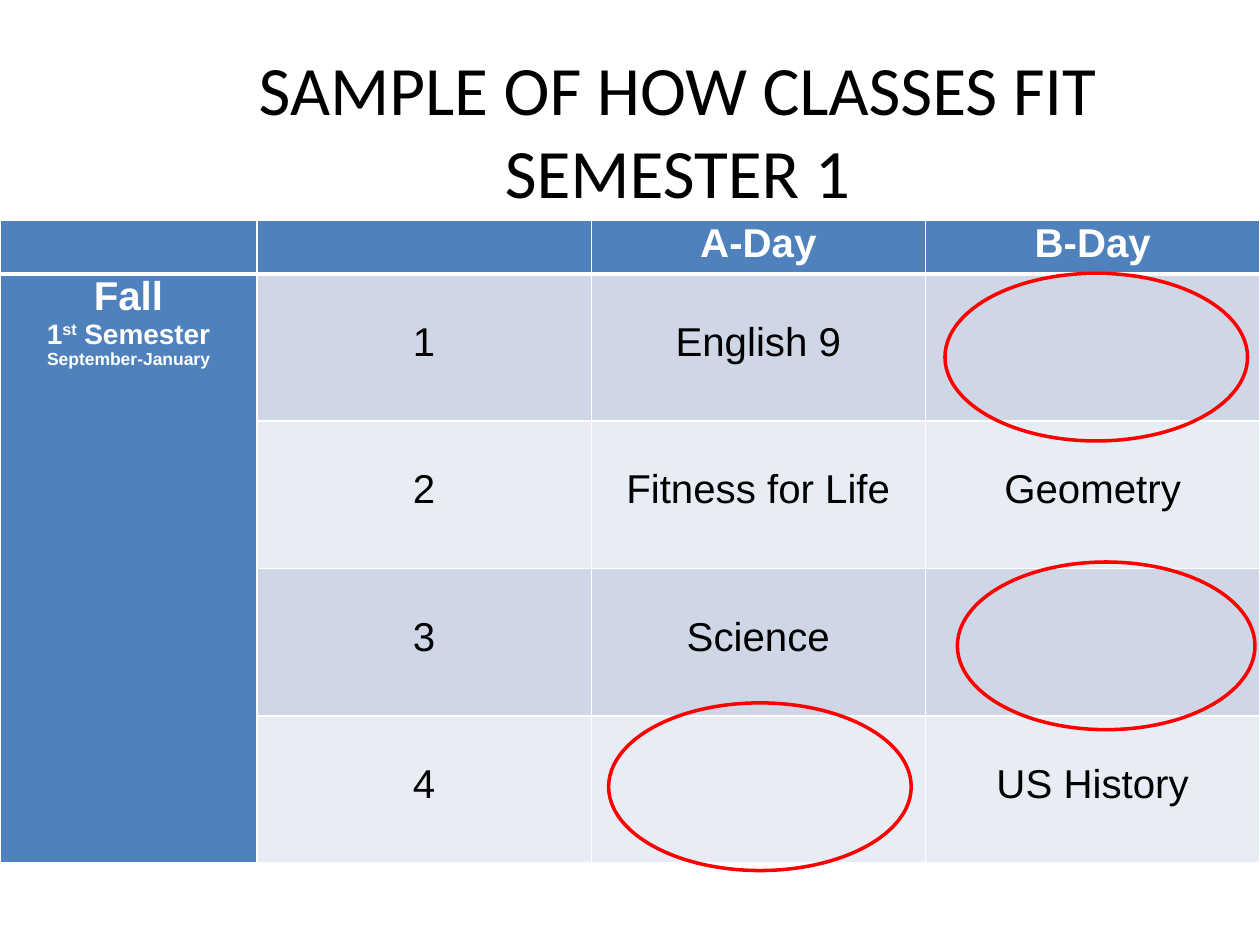
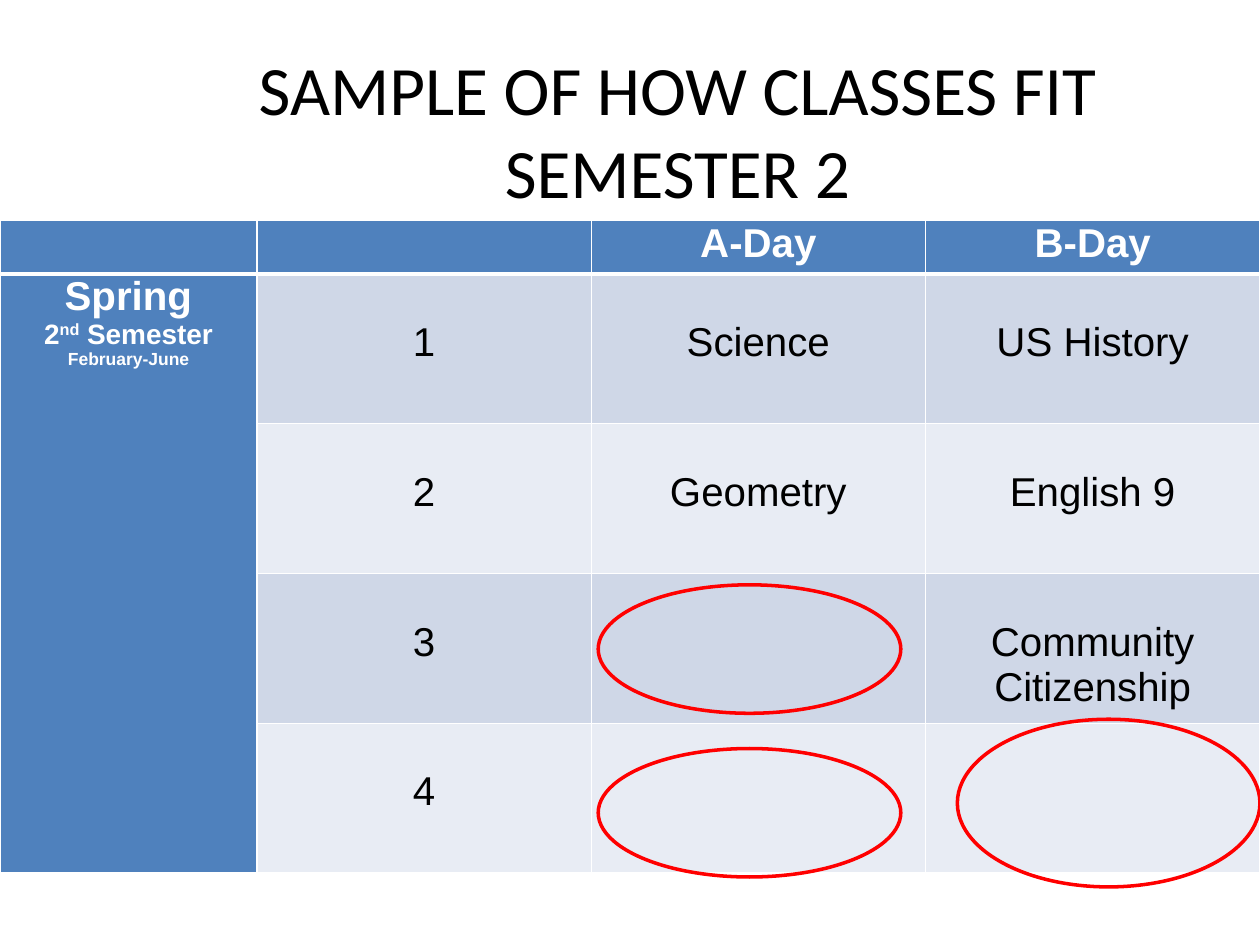
from lxml import etree
from pptx import Presentation
from pptx.dml.color import RGBColor as RGB
from pptx.enum.shapes import MSO_SHAPE as SHAPE
from pptx.enum.text import MSO_ANCHOR as ANCHOR, MSO_AUTO_SIZE as AUTO, PP_ALIGN as ALIGN
from pptx.oxml.ns import qn
from pptx.util import Cm, Pt

COLORS = {"header": "4F81BD", "odd": "CFD7E7", "even": "E8ECF4",
          "white": "FFFFFF", "black": "000000", "open": "FF0000"}
COL_WIDTHS = [5.18, 6.74, 6.74, 6.74]
HEADER_HEIGHT = 1.07
LESSON_TOP = 0.93  # one line of 23 pt text above each lesson
THIN, THICK = 1, 3

# Lessons are listed by period as (A-Day, B-Day); open slots are left, top, width, height.
SEMESTERS = [
    {"number": "1", "suffix": "st", "season": "Fall", "months": "September-January",
     "row_height": 2.97,
     "lessons": [("English 9", ""), ("Fitness for Life", "Geometry"),
                 ("Science", ""), ("", "US History")],
     "open_slots": [(12.27, 14.17, 6.1, 3.38), (19.05, 5.51, 6.1, 3.38),
                    (19.3, 11.33, 6, 3.38)]},
    {"number": "2", "suffix": "nd", "season": "Spring", "months": "February-June",
     "row_height": 3.02,
     "lessons": [("Science", "US History"), ("Geometry", "English 9"),
                 ("", "Community Citizenship"), ("", "")],
     "open_slots": [(12.06, 11.79, 6.1, 2.59), (19.3, 14.5, 6.1, 3.38),
                    (12.06, 15.09, 6.1, 2.59)]},
]


def write(p, text, size=23, color="white", bold=True, font="Arial", raised=False):
    """Add a centred run to paragraph p."""
    p.alignment = ALIGN.CENTER
    r = p.add_run()
    r.text = text
    r.font.size, r.font.bold, r.font.name = Pt(size), bold, font
    r.font.color.rgb = RGB.from_string(COLORS[color])
    if raised:
        r.font.superscript = True
        r._r.get_or_add_rPr().set("baseline", "30000")


def style_cell(cell, fill, top=THIN, bottom=THIN):
    """Set margins, white borders and fill of a table cell."""
    cell.margin_left = cell.margin_right = Cm(0.15)
    cell.margin_top = cell.margin_bottom = 0
    tcPr = cell._tc.get_or_add_tcPr()
    for side, width in (("L", THIN), ("R", THIN), ("T", top), ("B", bottom)):
        ln = etree.SubElement(tcPr, qn(f"a:ln{side}"), w=str(Pt(width)))
        solid = etree.SubElement(ln, qn("a:solidFill"))
        etree.SubElement(solid, qn("a:srgbClr"), val=COLORS["white"])
    cell.fill.solid()
    cell.fill.fore_color.rgb = RGB.from_string(COLORS[fill])


prs = Presentation()
prs.slide_width, prs.slide_height = Cm(25.4), Cm(19.05)

for sem in SEMESTERS:
    s = prs.slides.add_slide(prs.slide_layouts[5])

    title = s.shapes.title
    title.left, title.top, title.width, title.height = Cm(3.18), Cm(0.76), Cm(20.96), Cm(3.68)
    tf = title.text_frame
    tf.word_wrap, tf.auto_size, tf.vertical_anchor = True, AUTO.NONE, ANCHOR.MIDDLE
    p = tf.paragraphs[0]
    title_format = {"size": 39.6, "color": "black", "bold": False, "font": "Calibri"}
    write(p, "SAMPLE OF HOW CLASSES FIT", **title_format)
    p.add_line_break()
    write(p, f"SEMESTER {sem['number']}", **title_format)

    row_heights = [HEADER_HEIGHT] + [sem["row_height"]] * len(sem["lessons"])
    table = s.shapes.add_table(len(row_heights), len(COL_WIDTHS), 0, Cm(4.45),
                               Cm(sum(COL_WIDTHS)), Cm(sum(row_heights))).table
    for column, width in zip(table.columns, COL_WIDTHS):
        column.width = Cm(width)
    for row, height in zip(table.rows, row_heights):
        row.height = Cm(height)

    for col, day in enumerate(["", "", "A-Day", "B-Day"]):
        cell = table.cell(0, col)
        style_cell(cell, "header", bottom=THICK)
        if day:
            write(cell.text_frame.paragraphs[0], day)

    for period, lessons in enumerate(sem["lessons"], 1):
        top = THICK if period == 1 else THIN
        style_cell(table.cell(period, 0), "header", top=top)
        for col, text in enumerate([str(period), *lessons], 1):
            cell = table.cell(period, col)
            style_cell(cell, "odd" if period % 2 else "even", top=top)
            if text:
                cell.margin_top = Cm(LESSON_TOP)
                write(cell.text_frame.paragraphs[0], text, color="black", bold=False)

    season = table.cell(1, 0)
    season.merge(table.cell(len(sem["lessons"]), 0))
    p = season.text_frame.paragraphs[0]
    write(p, sem["season"])
    p.add_line_break()
    write(p, sem["number"], size=16)
    write(p, sem["suffix"], size=16, raised=True)
    write(p, " Semester", size=16)
    write(season.text_frame.add_paragraph(), sem["months"], size=10)

    for slot in sem["open_slots"]:
        sp = s.shapes.add_shape(SHAPE.OVAL, *map(Cm, slot))
        sp.shadow.inherit = False
        sp.fill.background()
        sp.line.color.rgb = RGB.from_string(COLORS["open"])
        sp.line.width = Pt(2)

prs.save("out.pptx")
